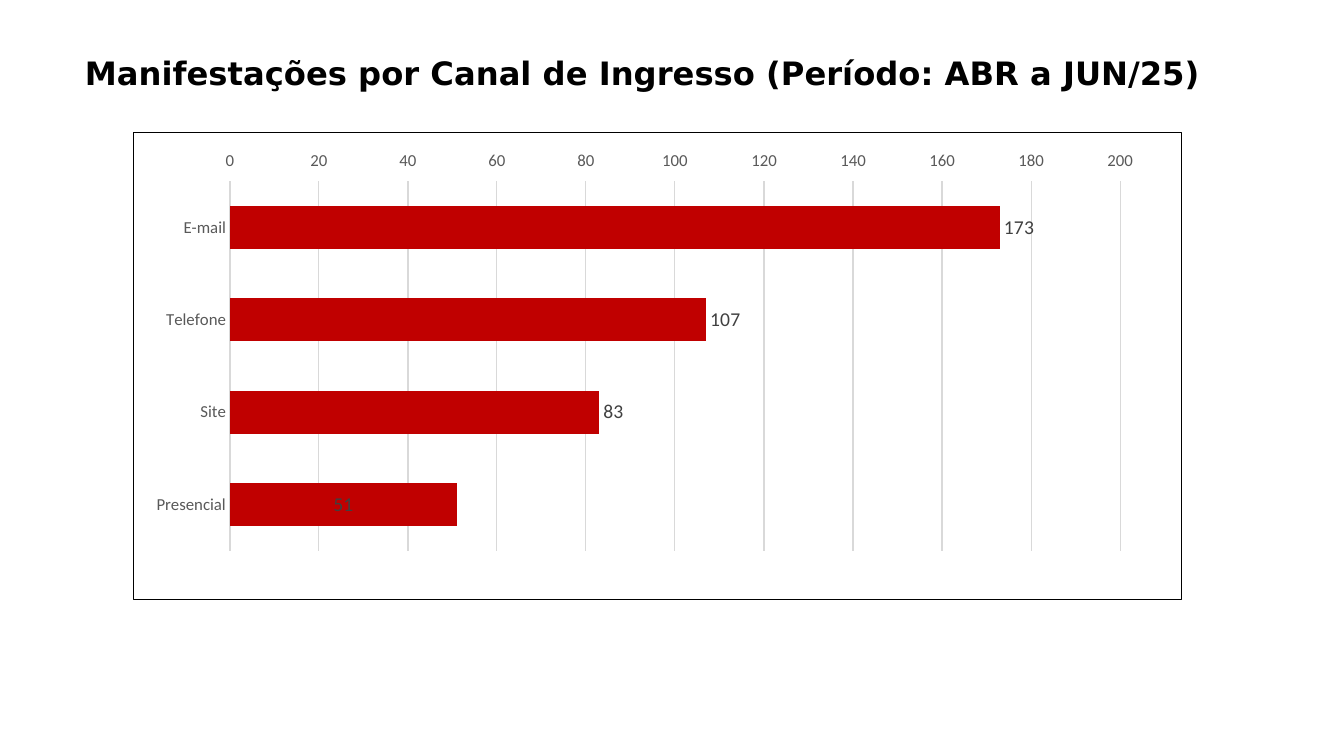
"""Build the slide on contacts received per entry channel."""
from dataclasses import dataclass

from lxml import etree
from pptx import Presentation
from pptx import util as u
from pptx.chart import data
from pptx.chart.chart import Chart
from pptx.dml import color
from pptx.enum import chart as ch, text
from pptx.oxml import ns, parse_xml
from pptx.slide import Slide
from pptx.text.text import Font

COLORS = {
    "title": "000000",
    "border": "000000",
    "bar": "C00000",
    "axis": "595959",
    "grid": "D9D9D9",
    "count": "404040",
}
PLOT_AREA = {"x": 0.092, "y": 0.104, "w": 0.871, "h": 0.792}


@dataclass(frozen=True)
class Channel:
    """One entry channel with its count and the place of its label."""

    name: str
    count: int
    label: ch.XL_LABEL_POSITION = ch.XL_LABEL_POSITION.OUTSIDE_END


CHANNELS = [
    Channel("Presencial", 51, ch.XL_LABEL_POSITION.CENTER),
    Channel("Site", 83),
    Channel("Telefone", 107),
    Channel("E-mail", 173),
]


def rgb(name: str) -> color.RGBColor:
    """Return the named colour."""
    return color.RGBColor.from_string(COLORS[name])


def style_font(font: Font, size: float, name: str, face: str = "Calibri", bold: bool = False) -> None:
    """Set face, size, weight and colour of a font."""
    font.name, font.size, font.bold = face, u.Pt(size), bold
    font.color.rgb = rgb(name)


def add_title(slide: Slide, wording: str) -> None:
    """Place and format the title placeholder."""
    heading = slide.shapes.title
    heading.left, heading.top = u.Inches(0.63), u.Inches(0.4)
    heading.width, heading.height = u.Inches(11.5), u.Inches(1.45)
    frame = heading.text_frame
    frame.text = wording
    frame.word_wrap = True
    frame.auto_size = text.MSO_AUTO_SIZE.NONE
    frame.vertical_anchor = text.MSO_ANCHOR.TOP
    frame.margin_top = u.Inches(0.17)
    line = frame.paragraphs[0]
    line.alignment = text.PP_ALIGN.CENTER
    line.line_spacing = 0.9
    style_font(line.runs[0].font, 23, "title", "DejaVu Sans", True)


def frame_chart(chart: Chart) -> None:
    """Give the chart its border and a fixed inner plot area."""
    space = chart._chartSpace
    border = parse_xml(
        f'<c:spPr {ns.nsdecls("c", "a")}><a:noFill/><a:ln w="9525"><a:solidFill>'
        f'<a:srgbClr val="{COLORS["border"]}"/></a:solidFill></a:ln></c:spPr>'
    )
    space.find(ns.qn("c:chart")).addnext(border)
    plot_area = space.find(f'.//{ns.qn("c:plotArea")}')
    for automatic in plot_area.findall(ns.qn("c:layout")):
        plot_area.remove(automatic)
    layout = etree.Element(ns.qn("c:layout"))
    manual = etree.SubElement(layout, ns.qn("c:manualLayout"))
    settings = {"layoutTarget": "inner", "xMode": "edge", "yMode": "edge", **PLOT_AREA}
    for tag, value in settings.items():
        etree.SubElement(manual, ns.qn(f"c:{tag}"), val=str(value))
    plot_area.insert(0, layout)


def style_axes(chart: Chart) -> None:
    """Format both axes and put the scale on top."""
    channels, scale = chart.category_axis, chart.value_axis
    for axis in (channels, scale):
        axis.major_tick_mark = axis.minor_tick_mark = ch.XL_TICK_MARK.NONE
        style_font(axis.tick_labels.font, 12, "axis")
    channels.format.line.color.rgb = rgb("grid")
    channels.format.line.width = u.Pt(1)
    scale.tick_label_position = ch.XL_TICK_LABEL_POSITION.HIGH
    scale.minimum_scale, scale.maximum_scale, scale.major_unit = 0, 205, 20
    scale.format.line.fill.background()
    scale.has_major_gridlines = True
    scale.major_gridlines.format.line.color.rgb = rgb("grid")
    scale.major_gridlines.format.line.width = u.Pt(0.75)


def add_channel_chart(slide: Slide, channels: list[Channel]) -> None:
    """Draw the bars of all channels with their counts."""
    counts = data.CategoryChartData()
    counts.categories = [channel.name for channel in channels]
    counts.add_series("Series 1", [channel.count for channel in channels])
    chart = slide.shapes.add_chart(
        ch.XL_CHART_TYPE.BAR_CLUSTERED,
        u.Inches(1.32), u.Inches(1.31), u.Inches(10.4), u.Inches(4.64), counts,
    ).chart
    chart.has_legend = chart.has_title = False
    style_font(chart.font, 10, "title")
    plot = chart.plots[0]
    plot.gap_width, plot.overlap, plot.vary_by_categories = 115, -20, False
    bars = plot.series[0]
    bars.format.fill.solid()
    bars.format.fill.fore_color.rgb = rgb("bar")
    bars.data_labels.show_value = True
    bars.data_labels.position = ch.XL_LABEL_POSITION.CENTER
    style_font(bars.data_labels.font, 14, "count")
    for index, channel in enumerate(channels):
        label = bars.points[index].data_label
        style_font(label.font, 14, "count")
        label.position = channel.label
    style_axes(chart)
    frame_chart(chart)


def main() -> None:
    """Build and save the presentation."""
    deck = Presentation()
    deck.slide_width, deck.slide_height = u.Inches(13.33), u.Inches(7.5)
    slide = deck.slides.add_slide(deck.slide_layouts[5])
    add_title(slide, "Manifestações por Canal de Ingresso (Período: ABR a JUN/25)")
    add_channel_chart(slide, CHANNELS)
    deck.save("out.pptx")


if __name__ == "__main__":
    main()
